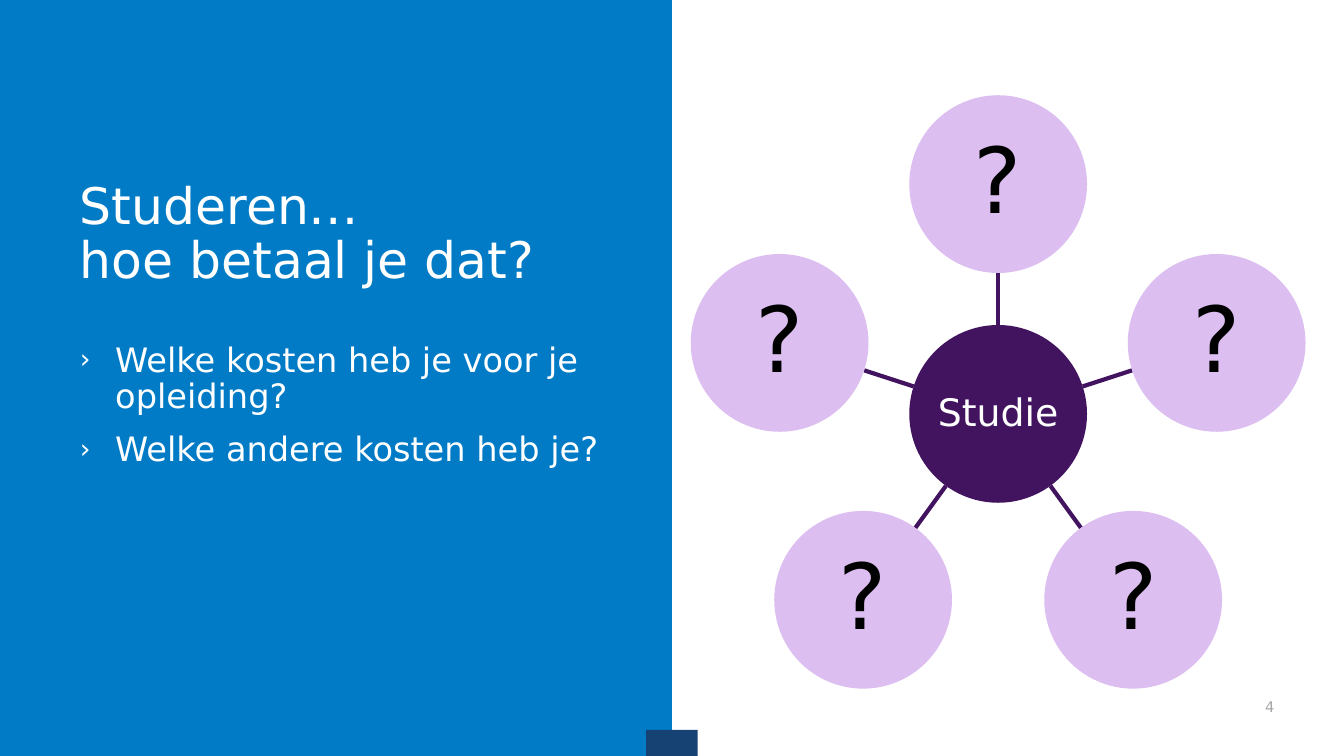
import math

from lxml import etree
from pptx import Presentation
from pptx.dml.color import RGBColor
from pptx.enum import shapes, text
from pptx.oxml import ns
from pptx.util import Cm, Pt

BLUE = RGBColor(0x01, 0x7B, 0xC6)
NAVY = RGBColor(0x15, 0x42, 0x73)
PURPLE = RGBColor(0x42, 0x14, 0x5F)
LILAC = RGBColor(0xDD, 0xBE, 0xF1)
WHITE = RGBColor(0xFF, 0xFF, 0xFF)
BLACK = RGBColor(0x00, 0x00, 0x00)
GREY = RGBColor(0xA6, 0xA6, 0xA6)
FONT = "DejaVu Sans"

PAGE_WIDTH, PAGE_HEIGHT = Cm(33.87), Cm(19.05)
QUESTIONS = ["Welke kosten heb je voor je opleiding?", "Welke andere kosten heb je?"]
SATELLITES = ["?"] * 5


def add_span(para, words, size, color):
    span = para.add_run()
    span.text = words
    span.font.name = FONT
    span.font.size = Pt(size)
    span.font.color.rgb = color


def add_plain_shape(page, kind, left, top, width, height, color):
    shape = page.shapes.add_shape(kind, left, top, width, height)
    shape.shadow.inherit = False
    shape.fill.solid()
    shape.fill.fore_color.rgb = color
    shape.line.fill.background()
    return shape


def place(holder, left, top, width, height, anchor):
    holder.left, holder.top, holder.width, holder.height = left, top, width, height
    holder.element.getparent().append(holder.element)
    frame = holder.text_frame
    frame.word_wrap = True
    frame.auto_size = text.MSO_AUTO_SIZE.NONE
    frame.vertical_anchor = anchor
    return frame


def set_bullet(para):
    properties = para._p.get_or_add_pPr()
    properties.set("marL", str(Cm(0.89)))
    properties.set("indent", str(-Cm(0.89)))
    color = etree.SubElement(properties, ns.qn("a:buClr"))
    etree.SubElement(color, ns.qn("a:srgbClr"), val=str(WHITE))
    etree.SubElement(properties, ns.qn("a:buSzPct"), val="80000")
    etree.SubElement(properties, ns.qn("a:buFont"), typeface=FONT)
    etree.SubElement(properties, ns.qn("a:buChar"), char="›")


def build_panel(page, left, top, width, height):
    rectangle = shapes.MSO_SHAPE.RECTANGLE
    add_plain_shape(page, rectangle, left, top, width, height, BLUE)
    tab_width, tab_height = Cm(1.3), Cm(0.66)
    add_plain_shape(page, rectangle, left + width - tab_width // 2,
                    top + height - tab_height, tab_width, tab_height, NAVY)

    text_left, text_width = left + Cm(1.76), Cm(13.9)
    frame = place(page.shapes.title, text_left, top + Cm(2.92), text_width, Cm(4.5),
                  text.MSO_ANCHOR.BOTTOM)
    para = frame.paragraphs[0]
    para.alignment = text.PP_ALIGN.LEFT
    para.line_spacing = 0.9
    add_span(para, "Studeren…", 36, WHITE)
    para.add_line_break()
    add_span(para, "hoe betaal je dat?", 36, WHITE)

    frame = place(page.placeholders[1], text_left, top + Cm(8.53), text_width, Cm(8.76),
                  text.MSO_ANCHOR.TOP)
    for index, question in enumerate(QUESTIONS):
        para = frame.add_paragraph() if index else frame.paragraphs[0]
        set_bullet(para)
        para.line_spacing = 0.9
        para.space_before = Pt(12 if index else 0)
        add_span(para, question, 24, WHITE)


def add_circle(page, center_x, center_y, radius, fill, label, size, color):
    circle = add_plain_shape(page, shapes.MSO_SHAPE.OVAL, center_x - radius,
                             center_y - radius, 2 * radius, 2 * radius, fill)
    frame = circle.text_frame
    frame.word_wrap = False
    frame.vertical_anchor = text.MSO_ANCHOR.MIDDLE
    frame.margin_left = frame.margin_right = Cm(0.05)
    frame.margin_top = frame.margin_bottom = Cm(0.05)
    para = frame.paragraphs[0]
    para.alignment = text.PP_ALIGN.CENTER
    para.line_spacing = 0.9
    add_span(para, label, size, color)


def build_wheel(page, left, top, width):
    radius, orbit = Cm(2.24), Cm(5.79)
    hub_x, hub_y = left + width // 2, top + radius + orbit

    def polar(distance, angle):
        return (round(hub_x + distance * math.sin(angle)),
                round(hub_y - distance * math.cos(angle)))

    add_circle(page, hub_x, hub_y, radius, PURPLE, "Studie", 27, WHITE)
    for index, label in enumerate(SATELLITES):
        angle = math.tau * index / len(SATELLITES)
        spoke = page.shapes.add_connector(shapes.MSO_CONNECTOR.STRAIGHT,
                                          *polar(radius, angle),
                                          *polar(orbit - radius, angle))
        spoke.line.color.rgb = PURPLE
        spoke.line.width = Pt(3)
        etree.SubElement(spoke.element.spPr, ns.qn("a:effectLst"))
        add_circle(page, *polar(orbit, angle), radius, LILAC, label, 65, BLACK)


def build_page_number(page, left, top, width, height):
    box = page.shapes.add_textbox(left, top, width, height)
    frame = box.text_frame
    frame.word_wrap = True
    frame.vertical_anchor = text.MSO_ANCHOR.BOTTOM
    frame.margin_right = 0
    para = frame.paragraphs[0]
    para.alignment = text.PP_ALIGN.RIGHT
    add_span(para, "4", 10.5, GREY)


def main():
    deck = Presentation()
    deck.slide_width, deck.slide_height = PAGE_WIDTH, PAGE_HEIGHT
    page = deck.slides.add_slide(deck.slide_layouts[1])
    half = PAGE_WIDTH // 2
    build_panel(page, 0, 0, half, PAGE_HEIGHT)
    build_page_number(page, half + Cm(1.28), Cm(17.27), Cm(13.9), Cm(0.89))
    build_wheel(page, Cm(17.42), Cm(2.4), Cm(15.47))
    deck.save("out.pptx")


if __name__ == "__main__":
    main()
